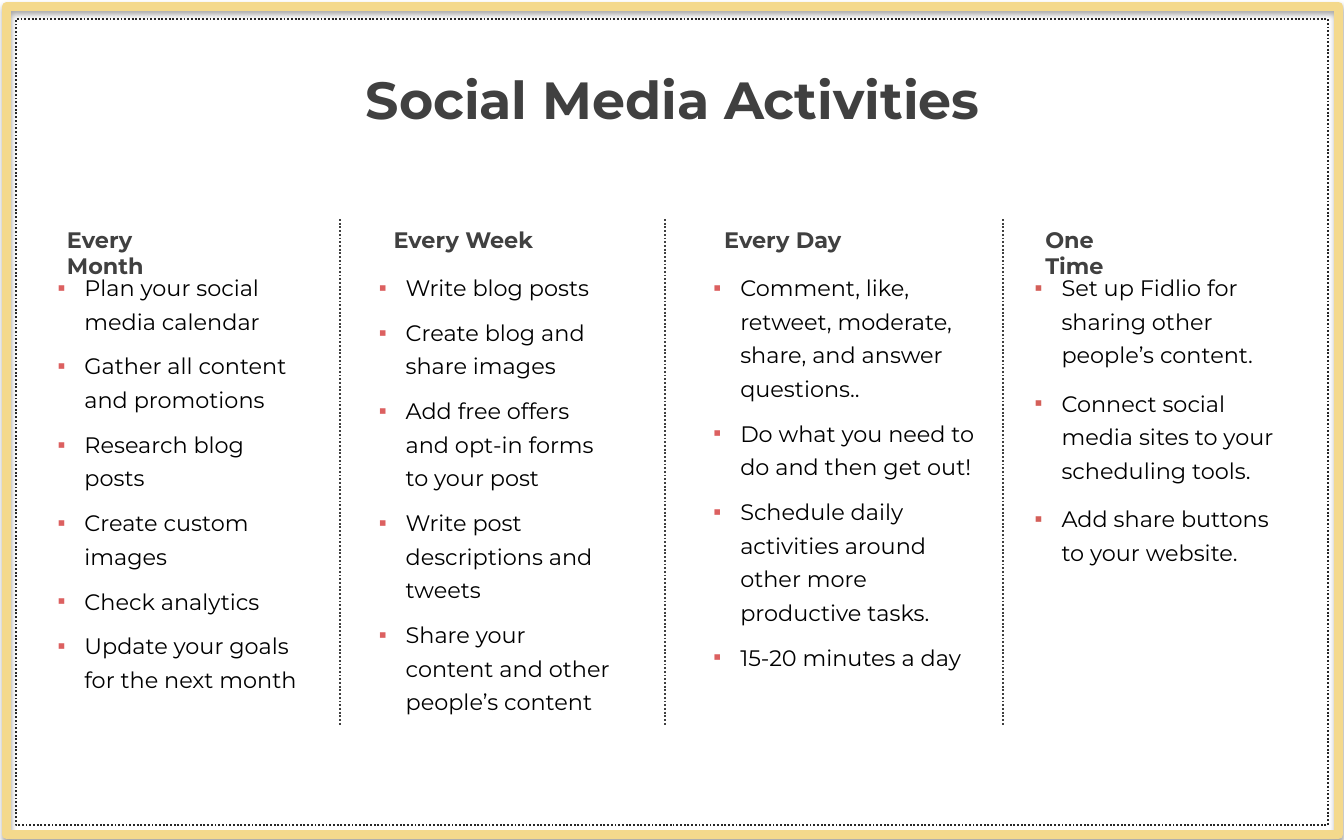
from lxml import etree
from pptx import Presentation
from pptx.dml.color import RGBColor
from pptx.enum.dml import MSO_LINE
from pptx.enum.shapes import MSO_CONNECTOR, MSO_SHAPE
from pptx.enum.text import MSO_ANCHOR, MSO_AUTO_SIZE, PP_ALIGN
from pptx.oxml import parse_xml
from pptx.oxml.ns import nsdecls, qn
from pptx.util import Inches, Pt

FONT = "Montserrat"
COLORS = {
    "frame": "F4D98C",
    "border": "262626",
    "heading": "404040",
    "body": "000000",
    "bullet": "DC6060",
    "last bullet": "D45F59",
}


def style_runs(paragraph, size, color, bold=False):
    for run in paragraph.runs:
        run.font.name = FONT
        run.font.size = Pt(size)
        run.font.bold = bold
        run.font.color.rgb = RGBColor.from_string(COLORS[color])


def add_bullet(paragraph, color):
    """Give the paragraph a hanging square bullet."""
    properties = paragraph._p.get_or_add_pPr()
    properties.set("marL", str(Inches(0.2)))
    properties.set("indent", str(-Inches(0.2)))
    bullet_color = etree.SubElement(properties, qn("a:buClr"))
    etree.SubElement(bullet_color, qn("a:srgbClr"), val=COLORS[color])
    etree.SubElement(properties, qn("a:buFont"), typeface="Arial")
    etree.SubElement(properties, qn("a:buChar"), char="▪")


prs = Presentation()
prs.slide_width, prs.slide_height = Inches(10), Inches(6.25)
slide = prs.slides.add_slide(prs.slide_layouts[5])
shapes = slide.shapes

# Frame and dotted border
borders = [
    (0.05, 0.05, 9.91, 6.16, "frame", 5, MSO_LINE.SOLID),
    (0.12, 0.14, 9.76, 6, "border", 1, MSO_LINE.ROUND_DOT),
]
for left, top, width, height, color, weight, dash in borders:
    border = shapes.add_shape(MSO_SHAPE.RECTANGLE, Inches(left), Inches(top),
                              Inches(width), Inches(height))
    border.shadow.inherit = False
    border.fill.background()
    border.line.color.rgb = RGBColor.from_string(COLORS[color])
    border.line.width = Pt(weight)
    border.line.dash_style = dash
    if color == "frame":
        border._element.spPr.find(qn("a:effectLst")).append(parse_xml(
            f'<a:outerShdw {nsdecls("a")} blurRad="{Pt(3.1)}" dist="{Pt(1.8)}" '
            'dir="5400000" rotWithShape="0"><a:srgbClr val="000000">'
            '<a:alpha val="35000"/></a:srgbClr></a:outerShdw>'))

# Title
title = shapes.title
title.left, title.top = Inches(0.6), Inches(0.45)
title.width, title.height = Inches(8.81), Inches(0.64)
title.text_frame.text = "Social Media Activities"
title.text_frame.auto_size = MSO_AUTO_SIZE.NONE
title.text_frame.vertical_anchor = MSO_ANCHOR.TOP
title.text_frame.paragraphs[0].alignment = PP_ALIGN.CENTER
style_runs(title.text_frame.paragraphs[0], 28, "heading", bold=True)

# Columns: heading, its left and width, list left, width and height,
# bullet colour, space after, activities
columns = [
    ("Every Month", 0.4, 1.28, 0.33, 2.07, 3.04, "bullet", 6, [
        "Plan your social media calendar",
        "Gather all content and promotions",
        "Research blog posts",
        "Create custom images",
        "Check analytics",
        "Update your goals for the next month",
    ]),
    ("Every Week", 2.83, 1.28, 2.72, 2.1, 3.46, "bullet", 6, [
        "Write blog posts",
        "Create blog and share images",
        "Add free offers \vand opt-in forms \vto your post",
        "Write post descriptions and tweets",
        "Share your \vcontent and other people’s content",
    ]),
    ("Every Day", 5.29, 1.1, 5.21, 2.16, 3.12, "bullet", 6, [
        "Comment, like, retweet, moderate, share, and answer questions..",
        "Do what you need to do and then get out!",
        "Schedule daily activities around other more productive tasks.",
        "15-20 minutes a day",
    ]),
    ("One Time", 7.68, 1, 7.6, 2.08, 2.34, "last bullet", 8, [
        "Set up Fidlio for sharing other people’s content.",
        "Connect social media sites to your scheduling tools.",
        "Add share buttons to your website.",
    ]),
]
for (heading, heading_left, heading_width, list_left, list_width, list_height,
     bullet_color, space_after, activities) in columns:
    heading_box = shapes.add_textbox(Inches(heading_left), Inches(1.63),
                                     Inches(heading_width), Inches(0.3))
    heading_box.text_frame.word_wrap = True
    heading_box.text_frame.text = heading
    style_runs(heading_box.text_frame.paragraphs[0], 12, "heading", bold=True)

    activity_list = shapes.add_textbox(Inches(list_left), Inches(1.94),
                                       Inches(list_width), Inches(list_height))
    frame = activity_list.text_frame
    frame.word_wrap = True
    frame.auto_size = MSO_AUTO_SIZE.SHAPE_TO_FIT_TEXT
    for number, activity in enumerate(activities):
        paragraph = frame.add_paragraph() if number else frame.paragraphs[0]
        paragraph.text = activity
        add_bullet(paragraph, bullet_color)
        paragraph.line_spacing = Pt(18)
        paragraph.space_after = Pt(space_after)
        style_runs(paragraph, 12, "body")

# Dotted dividers between the columns
for x in (2.53, 4.95, 7.46):
    divider = shapes.add_connector(MSO_CONNECTOR.STRAIGHT, Inches(x), Inches(1.63),
                                   Inches(x), Inches(5.4))
    divider.line.color.rgb = RGBColor.from_string(COLORS["heading"])
    divider.line.width = Pt(1)
    divider.line.dash_style = MSO_LINE.ROUND_DOT
    etree.SubElement(divider._element.spPr, qn("a:effectLst"))

prs.save("out.pptx")
